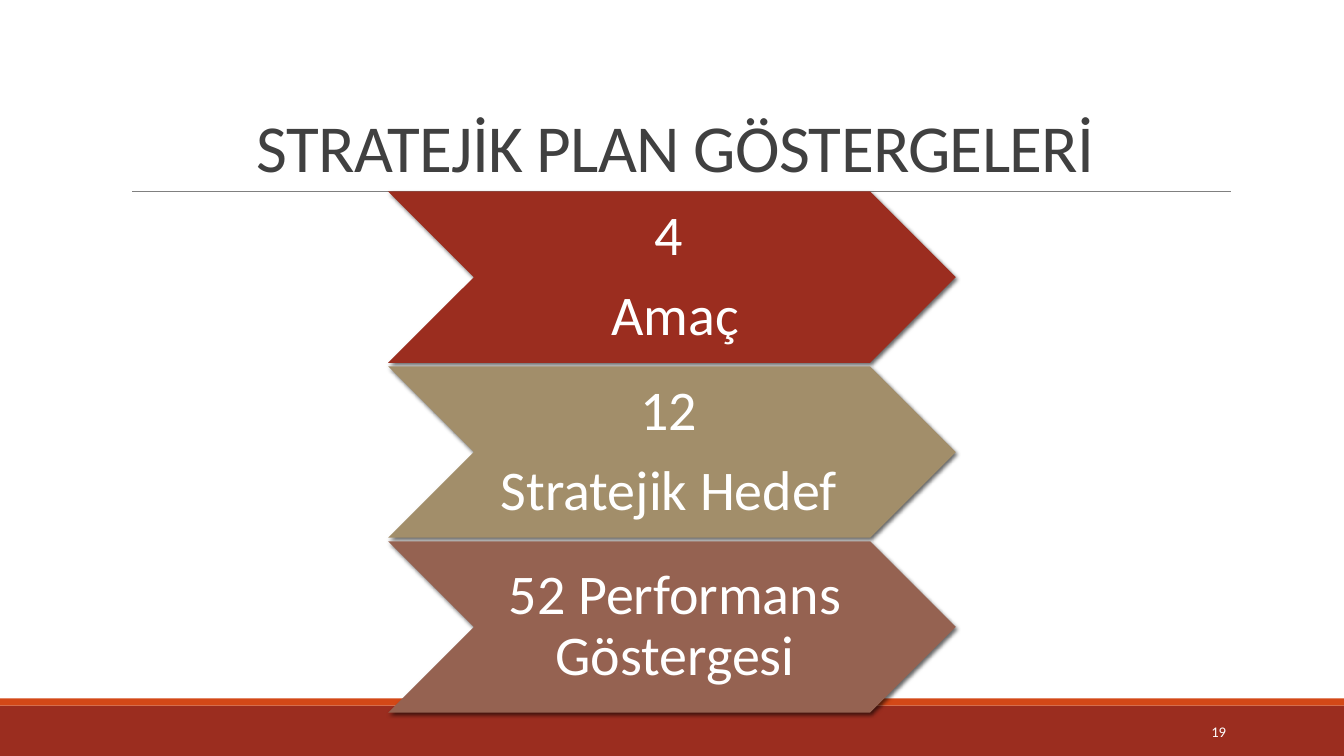
from lxml import etree
from pptx import Presentation
from pptx.dml.color import RGBColor
from pptx.enum import shapes, text
from pptx.oxml import ns
from pptx.util import Inches, Pt

# Content
TITLE = "STRATEJİK PLAN GÖSTERGELERİ"
PAGE_NUMBER = "19"
INDICATORS = [
    (["4 ", "Amaç"], "9B2D1F"),
    (["12 ", "Stratejik Hedef "], "A28E6A"),
    (["52 Performans Göstergesi"], "956251"),
]


class Theme:
    font = "Calibri"
    title, white, rule = "404040", "FFFFFF", "808080"
    footer, accent, shadow = "9B2D1F", "D34817", "000000"
    title_size, indicator_size, number_size = 48, 40, 10.5


# Layout in inches
SLIDE_WIDTH, SLIDE_HEIGHT = 13.33, 7.5
RULE_Y = 1.9
CHEVRON_LEFT, CHEVRON_WIDTH, CHEVRON_HEIGHT = 3.85, 5.63, 1.7
CHEVRON_PITCH = 1.735


def place(shape, left, top, width, height):
    shape.left, shape.top = Inches(left), Inches(top)
    shape.width, shape.height = Inches(width), Inches(height)


def add_filled(slide, preset, box, color):
    shape = slide.shapes.add_shape(preset, *map(Inches, box))
    shape.fill.solid()
    shape.fill.fore_color.rgb = RGBColor.from_string(color)
    shape.line.fill.background()
    shape.shadow.inherit = False
    return shape


def write(shape, lines, size, color, align, anchor, line_spacing=1.0, space_after=0):
    frame = shape.text_frame
    frame.word_wrap = True
    frame.auto_size = text.MSO_AUTO_SIZE.NONE
    frame.vertical_anchor = anchor
    frame.text = "\n".join(lines)
    for paragraph in frame.paragraphs:
        paragraph.alignment = align
        paragraph.line_spacing = line_spacing
        paragraph.space_after = Pt(space_after)
        for run in paragraph.runs:
            run.font.name = Theme.font
            run.font.size = Pt(size)
            run.font.color.rgb = RGBColor.from_string(color)


def add_effects(shape):
    return etree.SubElement(shape._element.spPr, ns.qn("a:effectLst"))


def add_soft_shadow(shape):
    effects = shape._element.spPr.find(ns.qn("a:effectLst"))
    shadow = etree.SubElement(effects, ns.qn("a:outerShdw"), blurRad=str(Pt(3)),
                              dist=str(Pt(2)), dir="2700000", rotWithShape="0")
    color = etree.SubElement(shadow, ns.qn("a:srgbClr"), val=Theme.shadow)
    etree.SubElement(color, ns.qn("a:alpha"), val="60000")


def main():
    presentation = Presentation()
    presentation.slide_width = Inches(SLIDE_WIDTH)
    presentation.slide_height = Inches(SLIDE_HEIGHT)
    slide = presentation.slides.add_slide(presentation.slide_layouts[5])
    center, middle = text.PP_ALIGN.CENTER, text.MSO_ANCHOR.MIDDLE

    # Footer bands
    rectangle = shapes.MSO_SHAPE.RECTANGLE
    add_filled(slide, rectangle, (0, 7, SLIDE_WIDTH, 0.5), Theme.footer)
    add_filled(slide, rectangle, (0, 6.93, SLIDE_WIDTH, 0.07), Theme.accent)

    # Title and the rule below it
    title = slide.shapes.title
    place(title, 1.2, 0.31, 11, 1.59)
    write(title, [TITLE], Theme.title_size, Theme.title, center,
          text.MSO_ANCHOR.BOTTOM, line_spacing=0.85)
    title.text_frame.paragraphs[0].runs[0].font._element.set("spc", "-50")
    rule = slide.shapes.add_connector(
        shapes.MSO_CONNECTOR.STRAIGHT, Inches(1.31), Inches(RULE_Y),
        Inches(12.21), Inches(RULE_Y))
    rule.line.color.rgb = RGBColor.from_string(Theme.rule)
    rule.line.width = Pt(0.5)
    add_effects(rule)

    # Page number
    number = slide.shapes.add_textbox(*map(Inches, (10.83, 7.06, 1.43, 0.4)))
    write(number, [PAGE_NUMBER], Theme.number_size, Theme.white,
          text.PP_ALIGN.RIGHT, middle)

    # Stacked indicator chevrons
    for index, (lines, color) in enumerate(INDICATORS):
        top = RULE_Y + index * CHEVRON_PITCH
        chevron = add_filled(slide, shapes.MSO_SHAPE.CHEVRON,
                             (CHEVRON_LEFT, top, CHEVRON_WIDTH, CHEVRON_HEIGHT), color)
        add_soft_shadow(chevron)
        write(chevron, lines, Theme.indicator_size, Theme.white, center, middle,
              line_spacing=0.9, space_after=0.35 * Theme.indicator_size)
        frame = chevron.text_frame
        frame.margin_left, frame.margin_right = Inches(0.06), 0
        frame.margin_top = frame.margin_bottom = Inches(0.03)

    presentation.save("out.pptx")


if __name__ == "__main__":
    main()
